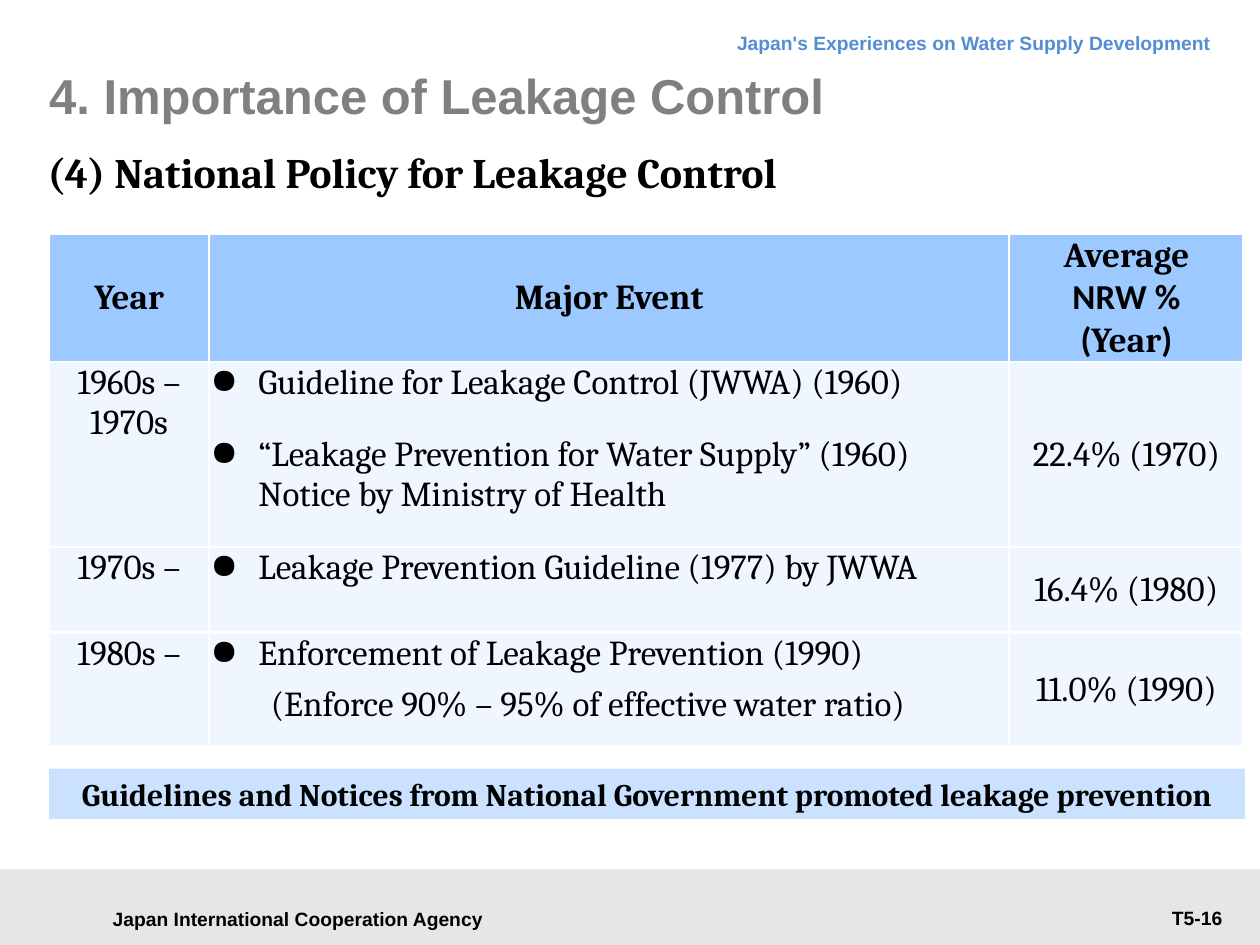
import pptx
import pptx.util
import pptx.dml.color
import pptx.enum.shapes
import pptx.enum.text
import pptx.oxml
import pptx.oxml.ns
import lxml.etree

Pt, Inches = pptx.util.Pt, pptx.util.Inches
RGB = pptx.dml.color.RGBColor.from_string
ALIGN = pptx.enum.text.PP_ALIGN
ANCHOR = pptx.enum.text.MSO_ANCHOR
GROW = pptx.enum.text.MSO_AUTO_SIZE.SHAPE_TO_FIT_TEXT
RECT = pptx.enum.shapes.MSO_SHAPE.RECTANGLE
qn = pptx.oxml.ns.qn

COLORS = {"black": "000000", "title": "808080", "topic": "548DD4", "footer": "E6E6E6",
          "head": "9CC9FF", "body": "EFF6FF", "banner": "CAE2FF", "rule": "FFFFFF"}

prs = pptx.Presentation()
prs.slide_width, prs.slide_height = Inches(10), Inches(7.5)
s = prs.slides.add_slide(prs.slide_layouts[6])


def place(x, y, w, h):
    """Turn percentages of the slide's width and height into lengths."""
    return [int(prs.slide_width * x / 100), int(prs.slide_height * y / 100),
            int(prs.slide_width * w / 100), int(prs.slide_height * h / 100)]


def write(p, text, size, font="Cambria", color="black", bold=True, align=ALIGN.LEFT):
    p.alignment = align
    r = p.add_run()
    r.text = text
    for name, value in {"size": Pt(size), "name": font, "bold": bold}.items():
        setattr(r.font, name, value)
    r.font.color.rgb = RGB(COLORS[color])


# Footer band and closing banner
bands = {}
for name, box in {"footer": (0, 92, 100, 8), "banner": (3.9, 81.33, 94.9, 5.33)}.items():
    sp = s.shapes.add_shape(RECT, *place(*box))
    sp.shadow.inherit = False
    sp.fill.solid()
    sp.fill.fore_color.rgb = RGB(COLORS[name])
    sp.line.fill.background()
    bands[name] = sp.text_frame
bands["banner"].word_wrap = True
write(bands["banner"].paragraphs[0],
      "Guidelines and Notices from National Government promoted leakage prevention",
      18, align=ALIGN.CENTER)

# Text boxes: text, place, run format, frame format, line spacing
no_inset = {"margin_left": 0, "margin_right": 0, "margin_top": 0, "margin_bottom": 0}
small = {"size": 11, "font": "Arial"}
texts = [
    ("Japan International Cooperation Agency", (7.1, 94.93, 33.1, 4.53),
     {**small, "align": ALIGN.CENTER}, {"vertical_anchor": ANCHOR.MIDDLE}, None),
    ("Japan's Experiences on Water Supply Development", (27.2, 1.73, 69.9, 5.07),
     {**small, "color": "topic", "align": ALIGN.RIGHT}, {}, 18),
    ("T5-16", (82.3, 95.2, 15.7, 3.87),
     {**small, "align": ALIGN.RIGHT}, {"auto_size": GROW}, None),
    ("4. Importance of Leakage Control", (3.9, 4.8, 96.1, 10.53),
     {"size": 28, "font": "Arial", "color": "title"},
     {**no_inset, "vertical_anchor": ANCHOR.MIDDLE}, None),
    ("(4) National Policy for Leakage Control", (2.8, 14.93, 94.5, 6),
     {"size": 24}, {**no_inset, "margin_left": Inches(0.1), "auto_size": GROW}, 32),
]
for text, box, run_format, frame_format, spacing in texts:
    tf = s.shapes.add_textbox(*place(*box)).text_frame
    tf.word_wrap = True
    for name, value in frame_format.items():
        setattr(tf, name, value)
    p = tf.paragraphs[0]
    if spacing:
        p.line_spacing = Pt(spacing)
    write(p, text, **run_format)

# Table of policy events: each cell is a list of paragraphs
rows = [
    (["Year"], ["Major Event"], ["Average", "NRW %", "(Year)"]),
    (["1960s –", "1970s"],
     ["Guideline for Leakage Control (JWWA) (1960)",
      "“Leakage Prevention for Water Supply” (1960) Notice by Ministry of Health"],
     ["22.4% (1970)"]),
    (["1970s –"], ["Leakage Prevention Guideline (1977) by JWWA"], ["16.4% (1980)"]),
    (["1980s –"],
     ["Enforcement of Leakage Prevention (1990)",
      "(Enforce 90% – 95% of effective water ratio)"],
     ["11.0% (1990)"]),
]
table = s.shapes.add_table(4, 3, *place(3.9, 24.8, 94.8, 53.6)).table
for column, share in zip(table.columns, (12.7, 63.5, 18.6)):
    column.width = int(prs.slide_width * share / 100)
for row, share in zip(table.rows, (12.93, 19.6, 9.07, 12)):
    row.height = int(prs.slide_height * share / 100)

for i, row in enumerate(rows):
    for j, lines in enumerate(row):
        cell = table.cell(i, j)
        head, event = i == 0, i > 0 and j == 1
        margins = {"margin_left": 0.01, "margin_right": 0.01, "margin_top": 0.01, "margin_bottom": 0}
        for name, value in margins.items():
            setattr(cell, name, Inches(value))
        cell.vertical_anchor = ANCHOR.MIDDLE if head or j == 2 else ANCHOR.TOP
        tcPr = cell._tc.get_or_add_tcPr()
        for side in ("a:lnL", "a:lnR", "a:lnT", "a:lnB"):
            ln = lxml.etree.SubElement(tcPr, qn(side), w=str(Pt(1.5)))
            fill = lxml.etree.SubElement(ln, qn("a:solidFill"))
            lxml.etree.SubElement(fill, qn("a:srgbClr"), val=COLORS["rule"])
        cell.fill.solid()
        cell.fill.fore_color.rgb = RGB(COLORS["head" if head else "body"])

        tf = cell.text_frame
        for k, line in enumerate(lines):
            p = tf.add_paragraph() if k else tf.paragraphs[0]
            pPr = p._p.get_or_add_pPr()
            if event and line.startswith("("):
                pPr.set("marL", str(Inches(0.48)))
                p.space_before = Pt(6)
            elif event:
                pPr.set("marL", str(Inches(0.38)))
                pPr.set("indent", str(Inches(-0.38)))
                if i == 1 and k == 0:
                    p.space_after = Pt(18)
                lxml.etree.SubElement(pPr, qn("a:buChar"), char="●")
            # The unit and the brackets of the last heading are in Calibri
            parts = {"NRW %": [("NRW %", "Calibri")],
                     "(Year)": [("(", "Calibri"), ("Year", "Cambria"), (")", "Calibri")]}
            for text, font in parts.get(line, [(line, "Cambria")]):
                write(p, text, 20, font, bold=head, align=ALIGN.LEFT if event else ALIGN.CENTER)

prs.save("out.pptx")
